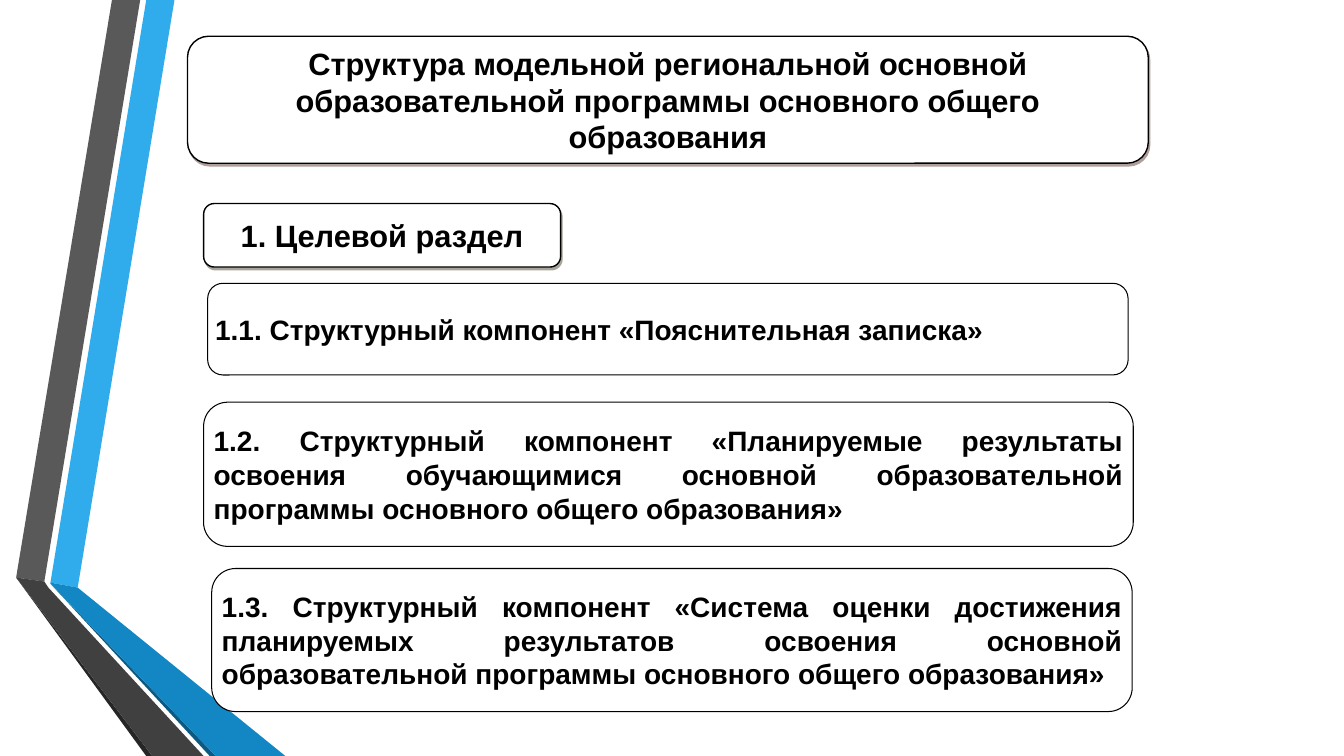
from lxml import etree
from pptx import Presentation
from pptx.dml.color import RGBColor
from pptx.enum.shapes import MSO_SHAPE as SHAPE
from pptx.enum.text import MSO_ANCHOR as ANCHOR, PP_ALIGN as ALIGN
from pptx.oxml.ns import qn
from pptx.util import Inches, Pt

WIDTH, HEIGHT = Inches(13.33), Inches(7.5)
FONT = "Arial"
COLORS = {
    "white": "FFFFFF", "black": "000000",
    "sky": "30ACEC", "blue": "1287C3", "navy": "0C5A82",
    "gray": "595959", "dark_gray": "404040", "charcoal": "262626",
    "title_shadow": "614038", "section_shadow": "524A37",
}

# Corners of each ribbon facet, in percent of the slide's width and height
RIBBONS = [
    ("sky", [(3.75, 77.07), (5.78, 77.73), (12.98, 0), (10.88, 0)]),
    ("gray", [(10.43, 0), (8.33, 0), (1.2, 76.4), (3.3, 76.93)]),
    ("charcoal", [(1.2, 76.4), (10.88, 100), (11.33, 100)]),
    ("navy", [(3.75, 77.2), (15.6, 100), (16.05, 100)]),
    ("blue", [(3.75, 77.07), (3.75, 77.2), (16.05, 100), (21.23, 100), (5.78, 77.73)]),
    ("dark_gray", [(15.15, 100), (3.6, 77.73), (3.3, 76.93), (1.2, 76.4), (11.33, 100)]),
]

# Left, top, width, height in percent of the slide, then the text
COMPONENTS = [
    ((15.45, 37.47, 68.49, 12.13),
     "1.1. Структурный компонент «Пояснительная записка»"),
    ((15.15, 53.2, 69.17, 19.07),
     "1.2. Структурный компонент «Планируемые результаты освоения обучающимися "
     "основной образовательной программы основного общего образования»"),
    ((15.75, 75.2, 68.49, 18.93),
     "1.3. Структурный компонент «Система оценки достижения планируемых результатов "
     "освоения основной образовательной программы основного общего образования»"),
]


def rgb(name):
    return RGBColor.from_string(COLORS[name])


def across(percent):
    return round(WIDTH * percent / 100)


def down(percent):
    return round(HEIGHT * percent / 100)


def add_ribbon(s, color, corners):
    points = [(across(x), down(y)) for x, y in corners]
    builder = s.shapes.build_freeform(*points[0])
    builder.add_line_segments(points[1:], close=True)
    sp = builder.convert_to_shape()
    sp.fill.solid()
    sp.fill.fore_color.rgb = rgb(color)
    sp.line.fill.background()
    sp.shadow.inherit = False


def add_shadow(sp, color):
    """Put a sharp, half-transparent shadow below and right of the shape."""
    effects = sp._element.spPr.find(qn("a:effectLst"))
    shadow = etree.SubElement(effects, qn("a:outerShdw"), blurRad="0", dist=str(Pt(2.2)),
                              dir=str(63 * 60000), algn="ctr", rotWithShape="0")
    clr = etree.SubElement(shadow, qn("a:srgbClr"), val=COLORS[color])
    etree.SubElement(clr, qn("a:alpha"), val="50000")


def write_text(sp, text, size=20, align=ALIGN.JUSTIFY, side=0.03):
    tf = sp.text_frame
    tf.word_wrap = True
    tf.vertical_anchor = ANCHOR.MIDDLE
    tf.margin_left = tf.margin_right = Inches(side)
    tf.margin_top = tf.margin_bottom = Inches(0.03)
    p = tf.paragraphs[0]
    p.alignment = align
    r = p.add_run()
    r.text = text
    r.font.name, r.font.size, r.font.bold = FONT, Pt(size), True
    r.font.color.rgb = rgb("black")


def add_box(s, area, text, line=0.75, shadow=None, **text_format):
    left, top, width, height = area
    sp = s.shapes.add_shape(SHAPE.ROUNDED_RECTANGLE, across(left), down(top),
                            across(width), down(height))
    sp.fill.solid()
    sp.fill.fore_color.rgb = rgb("white")
    sp.line.color.rgb = rgb("black")
    sp.line.width = Pt(line)
    sp.shadow.inherit = False
    if shadow:
        add_shadow(sp, shadow)
    write_text(sp, text, **text_format)


def main():
    prs = Presentation()
    prs.slide_width, prs.slide_height = WIDTH, HEIGHT
    s = prs.slides.add_slide(prs.slide_layouts[6])
    for color, corners in RIBBONS:
        add_ribbon(s, color, corners)
    heading = dict(line=1, size=22, align=ALIGN.CENTER)
    add_box(s, (13.95, 4.8, 71.49, 16.8),
            "Структура модельной региональной основной образовательной программы "
            "основного общего образования", shadow="title_shadow", **heading)
    add_box(s, (15.15, 26.93, 26.56, 8.4), "1. Целевой раздел",
            shadow="section_shadow", side=0, **heading)
    for area, text in COMPONENTS:
        add_box(s, area, text)
    prs.save("out.pptx")


if __name__ == "__main__":
    main()
